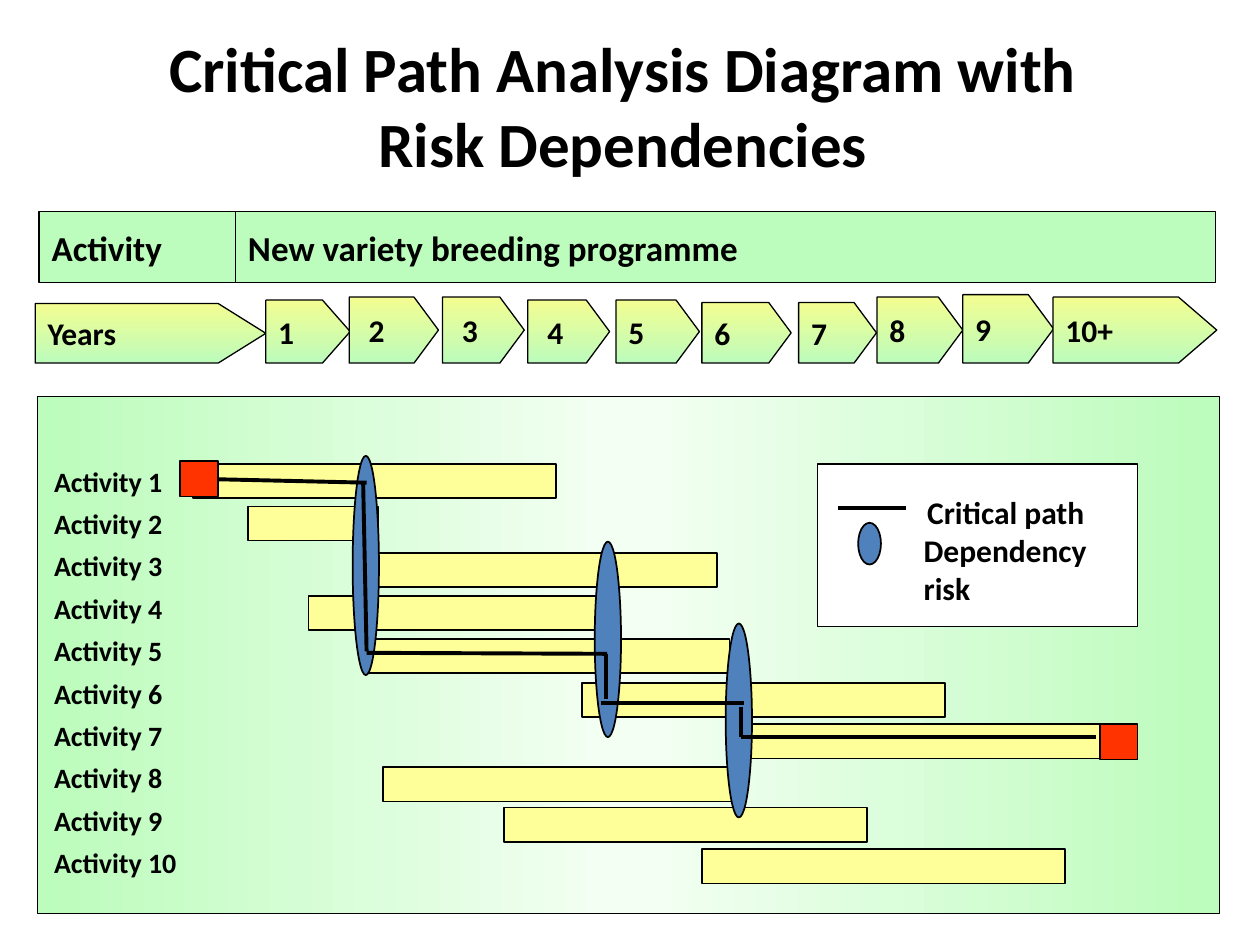
import copy

import pptx
import pptx.dml.color
import pptx.enum.shapes
import pptx.enum.text
import pptx.oxml
import pptx.oxml.ns
import pptx.util

Cm = pptx.util.Cm
Pt = pptx.util.Pt
SHAPES = pptx.enum.shapes.MSO_SHAPE
ALIGN = pptx.enum.text.PP_ALIGN
ANCHOR = pptx.enum.text.MSO_ANCHOR
qn = pptx.oxml.ns.qn


def colour(hex_string):
    return pptx.dml.color.RGBColor.from_string(hex_string)


class Diagram:
    font = "Calibri"
    ink = "000000"
    mint = "BCFCBC"
    pale = "F4FFF4"
    lime = "F3FD91"
    bar_fill = "FFFF99"
    risk_fill = "4F81BD"
    end_fill = "FF3300"

    def __init__(self, slide):
        self.slide = slide

    def set_text(self, frame, text, size, align=ALIGN.LEFT):
        frame.word_wrap = True
        frame.vertical_anchor = ANCHOR.MIDDLE
        frame.text = text
        for paragraph in frame.paragraphs:
            paragraph.alignment = align
            for run in paragraph.runs:
                run.font.name = self.font
                run.font.size = Pt(size)
                run.font.bold = True
                run.font.color.rgb = colour(self.ink)

    def shape(self, kind, left, top, width, height, fill, line=1, text="", size=18):
        shape = self.slide.shapes.add_shape(kind, Cm(left), Cm(top), Cm(width), Cm(height))
        shape.shadow.inherit = False
        shape.line.color.rgb = colour(self.ink)
        shape.line.width = Pt(line)
        if isinstance(fill, str):
            shape.fill.solid()
            shape.fill.fore_color.rgb = colour(fill)
        else:
            self.gradient(shape, *fill)
        if text:
            self.set_text(shape.text_frame, text, size)
        return shape

    def gradient(self, shape, angle, stops):
        shape.fill.gradient()
        shape.fill.gradient_angle = angle
        stop_list = shape._element.spPr.find(".//" + qn("a:gsLst"))
        while len(stop_list) < len(stops):
            stop_list.insert(1, copy.deepcopy(stop_list[0]))
        for index, (stop, shade) in enumerate(zip(shape.fill.gradient_stops, stops)):
            stop.color.rgb = colour(shade)
            stop.position = index / (len(stops) - 1)

    def box(self, left, top, width, height, fill, line=1, text="", size=20):
        return self.shape(SHAPES.RECTANGLE, left, top, width, height, fill, line, text, size)

    def risk(self, left, top, width, height):
        self.shape(SHAPES.OVAL, left, top, width, height, self.risk_fill)

    def year(self, text, left, top, width, point):
        arrow = self.shape(SHAPES.PENTAGON, left, top, width, 7.32 - top,
                           (270, [self.lime, self.mint]), 0.75, text)
        arrow.adjustments[0] = point

    def path_line(self, x1, y1, x2, y2):
        line = self.slide.shapes.add_connector(
            pptx.enum.shapes.MSO_CONNECTOR.STRAIGHT, Cm(x1), Cm(y1), Cm(x2), Cm(y2))
        line.line.color.rgb = colour(self.ink)
        line.line.width = Pt(2.25)
        line._element.spPr.append(pptx.oxml.parse_xml(
            f"<a:effectLst {pptx.oxml.ns.nsdecls('a')}/>"))

    def label(self, text, left, top, width, height, size, align=ALIGN.LEFT):
        frame = self.slide.shapes.add_textbox(
            Cm(left), Cm(top), Cm(width), Cm(height)).text_frame
        frame.margin_left = frame.margin_right = frame.margin_top = frame.margin_bottom = 0
        self.set_text(frame, text, size, align)


YEARS = [
    ("Years", 0.71, 6.12, 4.65, 0.8),
    ("1", 5.36, 6.05, 1.7, 0.44),
    (" 2", 7.04, 5.99, 1.8, 0.37),
    (" 3", 8.92, 5.99, 1.65, 0.37),
    (" 4", 10.64, 6.05, 1.65, 0.37),
    ("5", 12.42, 6.05, 1.68, 0.37),
    ("6", 14.15, 6.1, 1.8, 0.37),
    ("7", 16.1, 6.1, 1.57, 0.37),
    ("8", 17.68, 5.99, 1.73, 0.37),
    ("9", 19.41, 5.94, 1.83, 0.37),
    ("10+", 21.23, 5.99, 3.3, 0.58),
]
ACTIVITIES = [
    (3.89, 9.35, 7.32),
    (5, 10.21, 2.62),
    (7.14, 11.15, 7.32),
    (6.22, 12.01, 6.15),
    (7.39, 12.88, 7.32),
    (11.73, 13.77, 7.32),
    (14.88, 14.6, 7.32),
    (7.72, 15.47, 7.32),
    (10.16, 16.28, 7.32),
    (14.15, 17.12, 7.32),
]
RISKS = [(7.11, 9.19, 0.53, 4.42), (11.99, 10.92, 0.53, 3.94), (14.63, 12.57, 0.53, 3.91)]
CRITICAL_PATH = [
    (3.89, 9.65, 7.39, 9.73),
    (7.32, 9.7, 7.39, 13.13),
    (7.39, 13.16, 12.24, 13.18),
    (12.22, 13.18, 12.22, 14.1),
    (12.12, 14.17, 14.99, 14.17),
    (14.94, 14.25, 14.94, 14.86),
    (14.94, 14.86, 22.1, 14.86),
]
PATH_ENDS = [(3.63, 9.3), (22.17, 14.6)]


def main():
    deck = pptx.Presentation()
    deck.slide_width = Cm(25.4)
    deck.slide_height = Cm(19.05)
    diagram = Diagram(deck.slides.add_slide(deck.slide_layouts[6]))

    diagram.label("Critical Path Analysis Diagram with \vRisk Dependencies ",
                  0, 0.91, 25.4, 2.41, 36, ALIGN.CENTER)
    diagram.box(4.75, 4.27, 19.76, 1.42, diagram.mint, 0.75, "New variety breeding programme")
    diagram.box(0.79, 4.27, 3.96, 1.42, diagram.mint, 0.75, "Activity")
    for year in YEARS:
        diagram.year(*year)

    diagram.box(0.76, 8, 23.83, 10.41,
                (0, [diagram.mint, diagram.pale, diagram.mint]), 0.75)
    for index, (left, top, width) in enumerate(ACTIVITIES):
        diagram.label(f"Activity {index + 1}", 1.09, 9.35 + index * 0.855, 2.54, 0.69, 16)
        diagram.box(left, top, width, 0.69, diagram.bar_fill)
    for risk in RISKS:
        diagram.risk(*risk)
    for segment in CRITICAL_PATH:
        diagram.path_line(*segment)
    for left, top in PATH_ENDS:
        diagram.box(left, top, 0.76, 0.71, diagram.end_fill)

    diagram.box(16.48, 9.35, 6.45, 3.28, "FFFFFF")
    diagram.path_line(16.89, 10.24, 18.26, 10.24)
    diagram.label("Critical path", 18.69, 9.93, 3.4, 0.76, 18)
    diagram.risk(17.3, 10.54, 0.46, 0.84)
    diagram.label("Dependency \vrisk", 18.62, 10.69, 3.6, 1.55, 18)

    deck.save("out.pptx")


if __name__ == "__main__":
    main()
